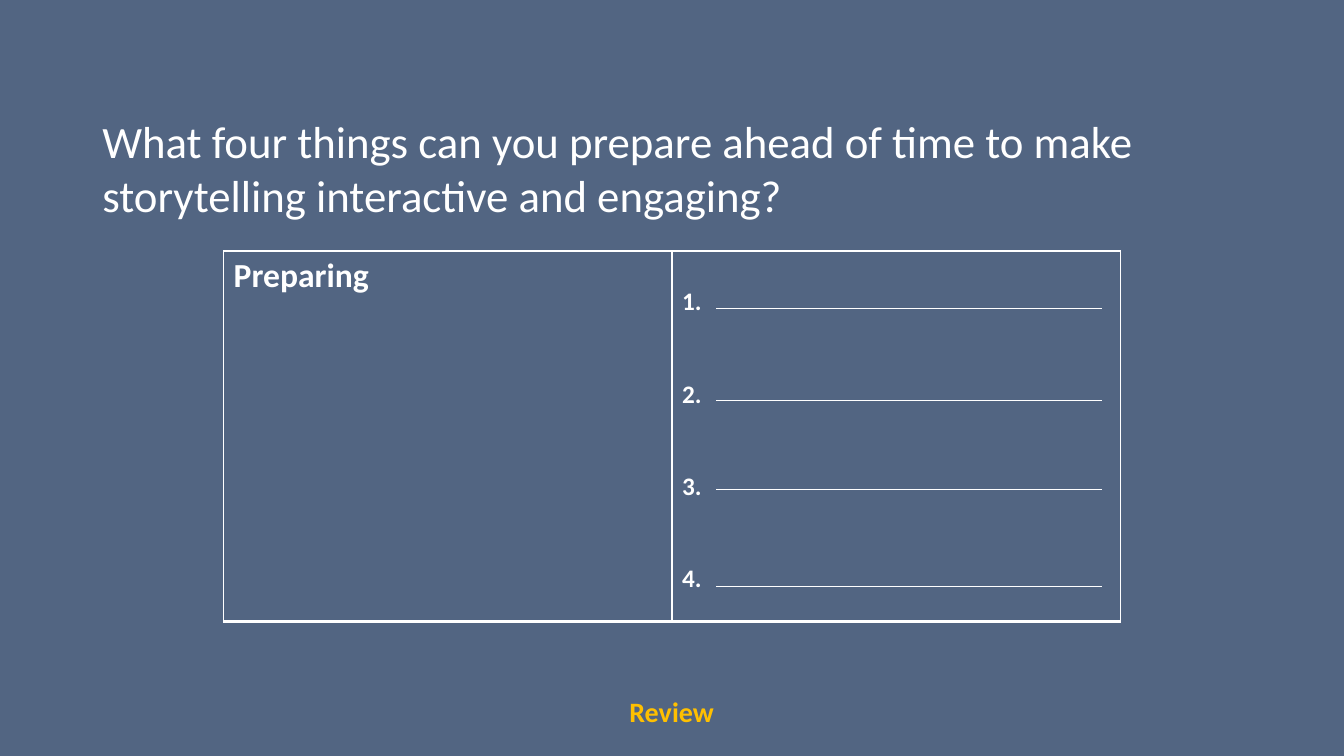
from lxml import etree
from pptx import Presentation
from pptx.dml.color import RGBColor
from pptx.enum.shapes import MSO_CONNECTOR
from pptx.oxml.ns import qn
from pptx.util import Pt

PX = 9525
STRAIGHT = MSO_CONNECTOR.STRAIGHT
WHITE, GOLD, SLATE = "FFFFFF", "FFC000", "526582"


def px(n):
    """Turn pixels into EMU."""
    return int(n * PX)


def color(hex_code):
    """Turn a hex string into a colour."""
    return RGBColor.from_string(hex_code)


def add_run(p, text, size, hex_code=WHITE, bold=False):
    """Add one formatted run to a paragraph."""
    r = p.add_run()
    r.text = text
    r.font.name = "Calibri"
    r.font.size = Pt(size)
    r.font.bold = bold
    r.font.color.rgb = color(hex_code)


def add_text(s, box, text, size, hex_code=WHITE, bold=False, spacing=1.0):
    """Place a wrapped single-paragraph text box."""
    tf = s.shapes.add_textbox(*map(px, box)).text_frame
    tf.word_wrap = True
    p = tf.paragraphs[0]
    p.line_spacing = spacing
    add_run(p, text, size, hex_code, bold)


def style_cell(cell):
    """Clear the cell fill and draw its white borders."""
    cell.fill.background()
    tc_pr = cell._tc.get_or_add_tcPr()
    for i, (side, width) in enumerate((("L", 1), ("R", 1), ("T", 1), ("B", 3))):
        ln = etree.Element(qn(f"a:ln{side}"), w=str(Pt(width)))
        fill = etree.SubElement(ln, qn("a:solidFill"))
        etree.SubElement(fill, qn("a:srgbClr"), val=WHITE)
        tc_pr.insert(i, ln)


def add_answer_line(s, x1, x2, y):
    """Draw one thin line to write on."""
    line = s.shapes.add_connector(STRAIGHT, px(x1), px(y), px(x2), px(y))
    line.line.color.rgb = color(WHITE)
    line.line.width = Pt(0.5)
    etree.SubElement(line._element.spPr, qn("a:effectLst"))


def add_answer_table(s, box):
    """Place the heading cell and the numbered cell with its answer lines."""
    x, y, w, h = box
    table = s.shapes.add_table(1, 2, *map(px, box)).table
    table.first_row = table.horz_banding = False
    heading, answers = table.cell(0, 0), table.cell(0, 1)
    for cell in (heading, answers):
        style_cell(cell)
    add_run(heading.text_frame.paragraphs[0], "Preparing", 24, bold=True)

    answers.margin_top = px(34)
    tf = answers.text_frame
    for i, offset in enumerate((55, 142, 227, 319)):
        p = tf.add_paragraph() if i else tf.paragraphs[0]
        if i:
            p.space_before = Pt(44)
        add_run(p, f"{i + 1}.", 18, bold=True)
        add_answer_line(s, x + w // 2 + 42, x + w - 17, y + offset)


def build_review_slide(prs):
    """Build the review question slide."""
    s = prs.slides.add_slide(prs.slide_layouts[6])
    s.background.fill.solid()
    s.background.fill.fore_color.rgb = color(SLATE)
    add_text(s, (590, 660, 108, 40), "Review", 20, GOLD, True, 0.9)
    add_text(s, (88, 104, 1104, 120), "What four things can you prepare ahead of time "
             "to make storytelling interactive and engaging?", 32)
    add_answer_table(s, (213, 239, 854, 353))


def main():
    """Create and save the presentation."""
    prs = Presentation()
    prs.slide_width, prs.slide_height = px(1280), px(720)
    build_review_slide(prs)
    prs.save("out.pptx")


if __name__ == "__main__":
    main()
